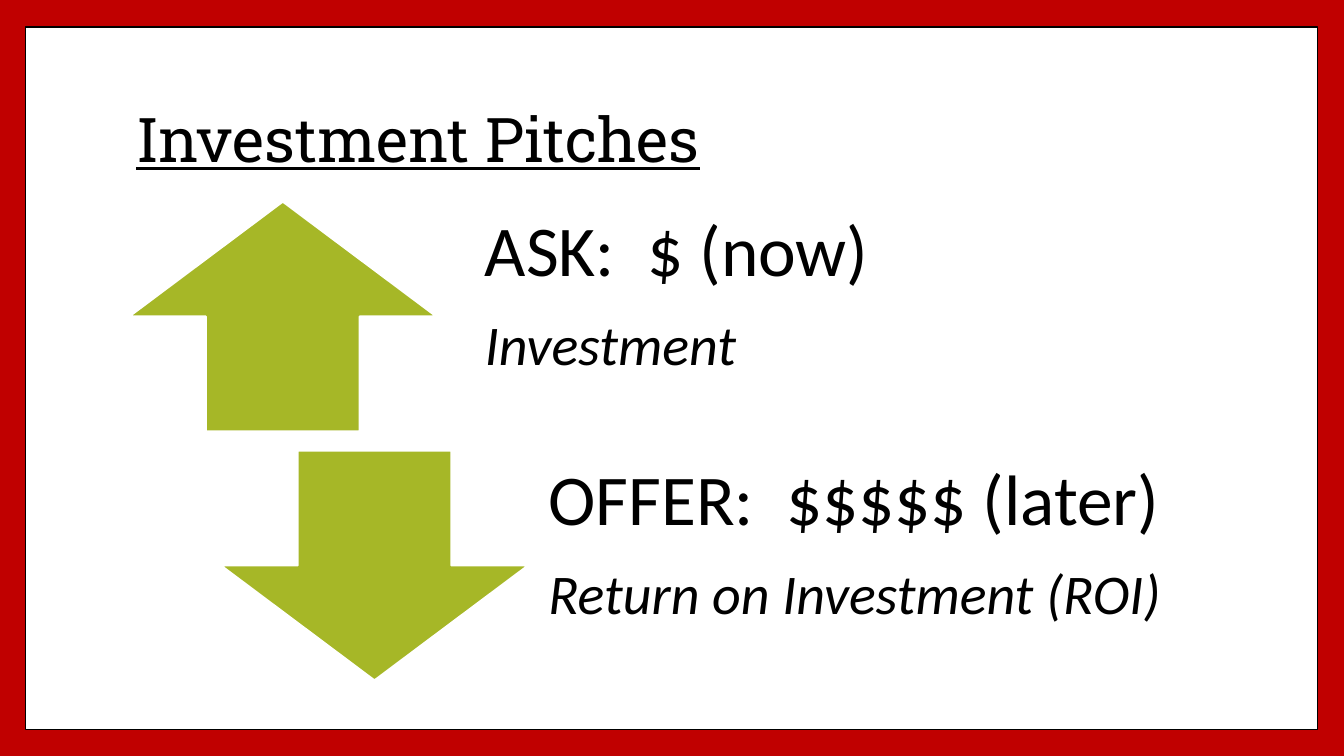
from pptx import Presentation
from pptx.dml.color import RGBColor
from pptx.enum.shapes import MSO_SHAPE as Preset
from pptx.enum.text import MSO_ANCHOR as Anchor, MSO_AUTO_SIZE as AutoSize, PP_ALIGN as Align
from pptx.util import Pt

RED = RGBColor(0xC0, 0x00, 0x00)
WHITE = RGBColor(0xFF, 0xFF, 0xFF)
BLACK = RGBColor(0x00, 0x00, 0x00)
GREEN = RGBColor(0xA6, 0xB7, 0x27)

ARROW_WIDTH, ROW_HEIGHT = 219.6, 164.2

# preset, arrow left, top, text left, text width, headline, detail
PITCHES = [
    (Preset.UP_ARROW, 92.2, 144, 317.5, 463.7, "ASK:  $ (now)", "Investment"),
    (Preset.DOWN_ARROW, 157.7, 321.8, 362.9, 505.4,
     "OFFER:  $$$$$ (later)", "Return on Investment (ROI)"),
]


def write(para, text, size, font="Calibri", italic=None, underline=None, after=0):
    para.alignment = Align.LEFT
    para.line_spacing = 0.9
    para.space_before = Pt(0)
    para.space_after = Pt(after)
    span = para.add_run()
    span.text = text
    span.font.name = font
    span.font.size = Pt(size)
    span.font.italic = italic
    span.font.underline = underline
    span.font.color.rgb = BLACK


def add_preset(page, preset, left, top, width, height, fill, line, line_width):
    shape = page.shapes.add_shape(preset, Pt(left), Pt(top), Pt(width), Pt(height))
    shape.shadow.inherit = False
    shape.fill.solid()
    shape.fill.fore_color.rgb = fill
    shape.line.color.rgb = line
    shape.line.width = Pt(line_width)
    return shape


def add_frame(page):
    """Place the white panel behind everything else on the page."""
    panel = add_preset(page, Preset.RECTANGLE, 18, 19.4, 923, 501.8, WHITE, BLACK, 1)
    page.shapes.element.insert(2, panel.element)


def set_title(page, text):
    title = page.shapes.title
    title.left, title.top, title.width, title.height = Pt(90), Pt(48.2), Pt(777.6), Pt(106.6)
    frame = title.text_frame
    frame.auto_size = AutoSize.NONE
    frame.vertical_anchor = Anchor.MIDDLE
    write(frame.paragraphs[0], text, 44, font="Roboto Slab", underline=True)


def add_pitch_text(page, left, top, width, headline, detail):
    box = page.shapes.add_textbox(Pt(left), Pt(top), Pt(width), Pt(ROW_HEIGHT))
    frame = box.text_frame
    frame.word_wrap = True
    frame.vertical_anchor = Anchor.MIDDLE
    frame.margin_left = frame.margin_right = frame.margin_bottom = Pt(28.8)
    frame.margin_top = Pt(0)
    write(frame.paragraphs[0], headline, 51, after=18)
    write(frame.add_paragraph(), detail, 40, italic=True, after=6)


def main():
    deck = Presentation()
    deck.slide_width, deck.slide_height = Pt(960), Pt(540)
    page = deck.slides.add_slide(deck.slide_layouts[5])
    page.background.fill.solid()
    page.background.fill.fore_color.rgb = RED
    add_frame(page)
    set_title(page, "Investment Pitches")
    for preset, arrow_left, top, text_left, text_width, headline, detail in PITCHES:
        add_preset(page, preset, arrow_left, top, ARROW_WIDTH, ROW_HEIGHT, GREEN, WHITE, 1.5)
        add_pitch_text(page, text_left, top, text_width, headline, detail)
    deck.save("out.pptx")


if __name__ == "__main__":
    main()
